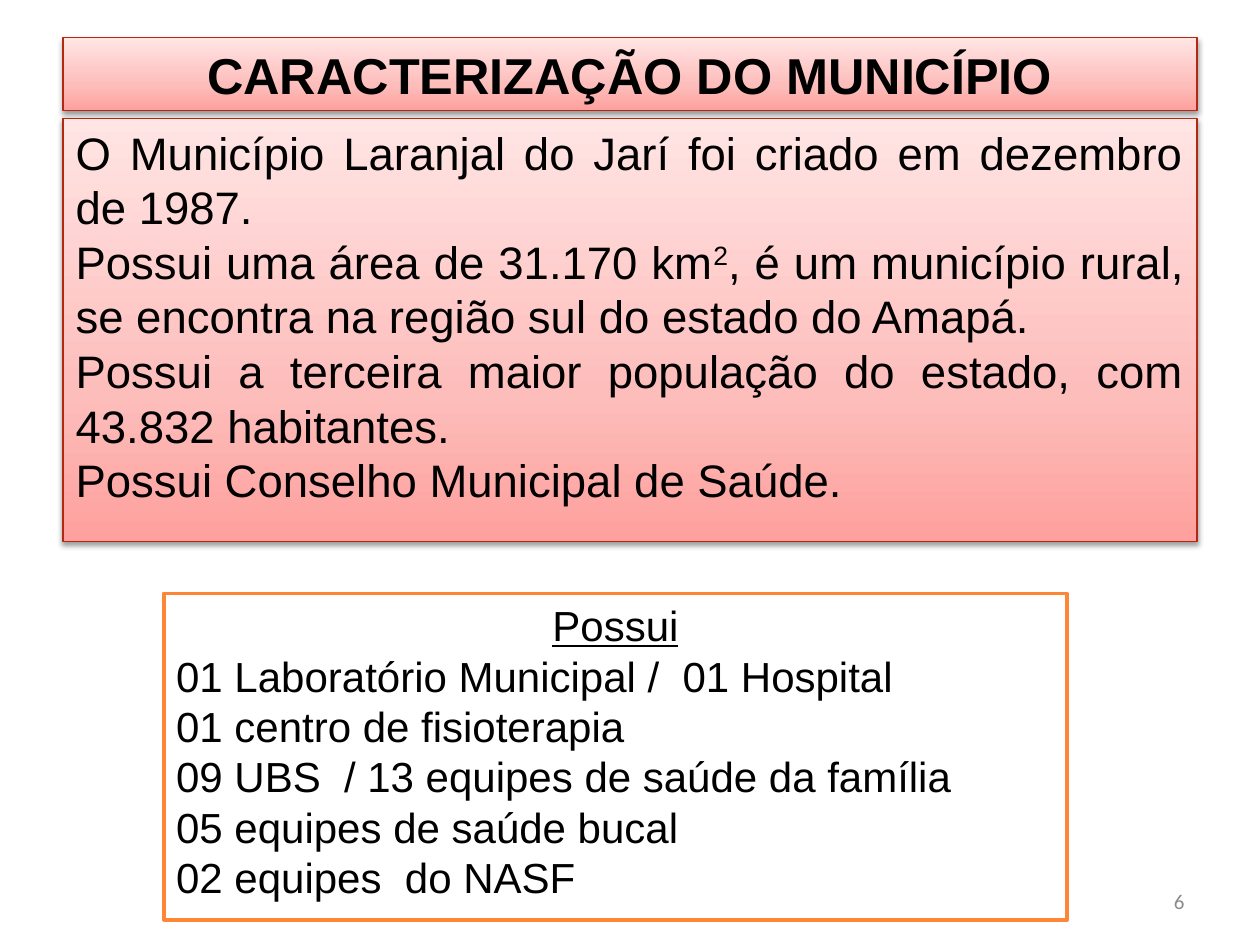
"""Build the slide describing the municipality of Laranjal do Jarí."""
from pptx import Presentation
from pptx.dml.color import RGBColor
from pptx.enum.shapes import MSO_SHAPE
from pptx.enum.text import MSO_ANCHOR, MSO_AUTO_SIZE, PP_ALIGN
from pptx.oxml import parse_xml
from pptx.oxml.ns import nsdecls
from pptx.util import Inches, Pt

CENTER, JUSTIFY, RIGHT = PP_ALIGN.CENTER, PP_ALIGN.JUSTIFY, PP_ALIGN.RIGHT
TOP, MIDDLE = MSO_ANCHOR.TOP, MSO_ANCHOR.MIDDLE
RECTANGLE = MSO_SHAPE.RECTANGLE
NO_AUTO_SIZE = MSO_AUTO_SIZE.NONE

GRADIENT = f"""<a:gradFill {nsdecls('a')} rotWithShape="1"><a:gsLst>
<a:gs pos="0"><a:srgbClr val="FEA09D"/></a:gs>
<a:gs pos="35000"><a:srgbClr val="FDBDBB"/></a:gs>
<a:gs pos="100000"><a:srgbClr val="FFE5E4"/></a:gs>
</a:gsLst><a:lin ang="16200000" scaled="1"/></a:gradFill>"""
SHADOW = f"""<a:effectLst {nsdecls('a')}>
<a:outerShdw blurRad="39370" dist="20320" dir="5400000" rotWithShape="0">
<a:srgbClr val="000000"><a:alpha val="38000"/></a:srgbClr>
</a:outerShdw></a:effectLst>"""


def color(value):
    return RGBColor.from_string(value)


def format_paragraph(paragraph, size, alignment, font_name="Arial", font_color="000000"):
    paragraph.alignment = alignment
    paragraph.space_before = Pt(0)
    paragraph.font.size = Pt(size)
    paragraph.font.name = font_name
    paragraph.font.color.rgb = color(font_color)


presentation = Presentation()
presentation.slide_width = Inches(10)
presentation.slide_height = Inches(7.5)
slide = presentation.slides.add_slide(presentation.slide_layouts[1])
title, body = slide.placeholders

for panel, top, height, anchor in ((title, 0.3, 0.58, MIDDLE), (body, 0.94, 3.36, TOP)):
    panel.left, panel.top = Inches(0.5), Inches(top)
    panel.width, panel.height = Inches(9), Inches(height)
    properties = panel.element.spPr
    properties.append(parse_xml(GRADIENT))
    panel.line.color.rgb = color("B32812")
    panel.line.width = Pt(0.75)
    properties.append(parse_xml(SHADOW))
    panel.text_frame.auto_size = NO_AUTO_SIZE
    panel.text_frame.vertical_anchor = anchor

title.text_frame.text = "CARACTERIZAÇÃO DO MUNICÍPIO"
heading = title.text_frame.paragraphs[0]
format_paragraph(heading, 28.8, CENTER)
heading.font.bold = True

body.text_frame.text = "\n".join((
    "O Município Laranjal do Jarí foi criado em dezembro de 1987.",
    "Possui uma área de 31.170 km",
    "Possui a terceira maior população do estado, com 43.832 habitantes. ",
    "Possui Conselho Municipal de Saúde.",
))
for paragraph in body.text_frame.paragraphs:
    format_paragraph(paragraph, 26, JUSTIFY)
    paragraph_properties = paragraph._p.get_or_add_pPr()
    paragraph_properties.set("marL", "0")
    paragraph_properties.set("indent", "0")
    bullet_none = parse_xml(f"<a:buNone {nsdecls('a')}/>")
    paragraph_properties.insert_element_before(bullet_none, "a:tabLst", "a:defRPr", "a:extLst")

area = body.text_frame.paragraphs[1]
exponent = area.add_run()
exponent.text = "2"
exponent.font._element.set("baseline", "30000")
area.add_run().text = ", é um município rural, se encontra na região sul do estado do Amapá."

page_number = slide.shapes.add_textbox(Inches(7.17), Inches(6.95), Inches(2.33), Inches(0.4))
page_number.text_frame.word_wrap = True
page_number.text_frame.vertical_anchor = MIDDLE
page_number.text_frame.text = "6"
format_paragraph(page_number.text_frame.paragraphs[0], 12, RIGHT, "Calibri", "8C8C8C")

services = slide.shapes.add_shape(RECTANGLE, Inches(1.3), Inches(4.71), Inches(7.17), Inches(2.59))
services.shadow.inherit = False
services.fill.solid()
services.fill.fore_color.rgb = color("FFFFFF")
services.line.color.rgb = color("FE8637")
services.line.width = Pt(2)
services.text_frame.word_wrap = True
services.text_frame.vertical_anchor = TOP
services.text_frame.text = "\n".join((
    "Possui",
    "01 Laboratório Municipal /  01 Hospital",
    "01 centro de fisioterapia",
    "09 UBS  / 13 equipes de saúde da família",
    "05 equipes de saúde bucal",
    "02 equipes  do NASF ",
))
for paragraph in services.text_frame.paragraphs:
    format_paragraph(paragraph, 24, JUSTIFY)
services_heading = services.text_frame.paragraphs[0]
services_heading.alignment = CENTER
services_heading.font.underline = True

presentation.save("out.pptx")
